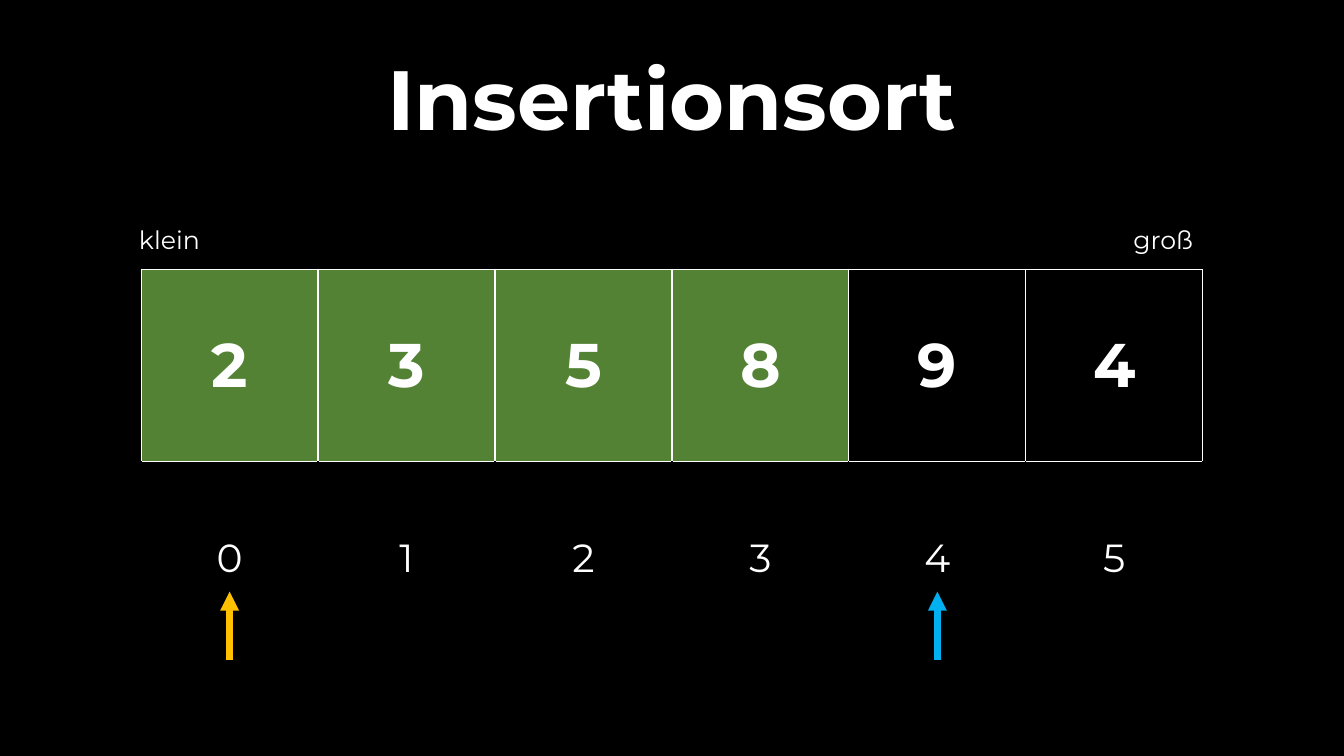
from lxml import etree
from pptx import Presentation
from pptx.dml.color import RGBColor
from pptx.enum.shapes import MSO_CONNECTOR
from pptx.enum.text import MSO_ANCHOR, PP_ALIGN
from pptx.oxml.ns import qn
from pptx.util import Inches, Pt

STRAIGHT = MSO_CONNECTOR.STRAIGHT
MIDDLE = MSO_ANCHOR.MIDDLE
LEFT, CENTER, RIGHT = PP_ALIGN.LEFT, PP_ALIGN.CENTER, PP_ALIGN.RIGHT

FONT = "Montserrat"
BLACK, WHITE, GREEN = "000000", "FFFFFF", "548235"
YELLOW, BLUE = "FFC000", "00B0F0"

SLIDE_WIDTH, SLIDE_HEIGHT = 13.33, 7.5
VALUES = [2, 3, 5, 8, 9, 4]
SORTED_COUNT = 4
TABLE_LEFT, TABLE_TOP = 1.4, 2.67
COLUMN_WIDTH = (SLIDE_WIDTH - 2 * TABLE_LEFT) / len(VALUES)
ROW_HEIGHT = 1.91
LABEL_TOP, LABEL_WIDTH, LABEL_HEIGHT = 2.18, 1.51, 0.4
ARROW_TOP, ARROW_LENGTH = 5.87, 0.68


def color(hex_string):
    """Turn a hex string into a colour."""
    return RGBColor.from_string(hex_string)


def write(text_frame, text, size, alignment, bold=False):
    """Write one white paragraph and return it."""
    text_frame.text = str(text)
    paragraph = text_frame.paragraphs[0]
    paragraph.alignment = alignment
    paragraph.font.name = FONT
    paragraph.font.size = Pt(size)
    paragraph.font.bold = bold
    paragraph.font.color.rgb = color(WHITE)
    return paragraph


def set_title(slide, text):
    """Place the heading across the top of the slide."""
    title = slide.shapes.title
    title.left, title.top = Inches(0.15), Inches(0.31)
    title.width, title.height = Inches(SLIDE_WIDTH - 0.3), Inches(1.42)
    title.text_frame.vertical_anchor = MIDDLE
    paragraph = write(title.text_frame, text, 60, CENTER, bold=True)
    paragraph.line_spacing = 0.9


def add_label(slide, text, left, alignment):
    """Add a small label above the array."""
    label = slide.shapes.add_textbox(
        Inches(left), Inches(LABEL_TOP), Inches(LABEL_WIDTH), Inches(LABEL_HEIGHT))
    label.text_frame.word_wrap = True
    write(label.text_frame, text, 18, alignment)


def set_borders(cell, border_colors):
    """Draw the left, right, top and bottom borders of a cell."""
    properties = cell._tc.get_or_add_tcPr()
    for side, border_color in zip("LRTB", border_colors):
        line = etree.SubElement(properties, qn(f"a:ln{side}"), w=str(Pt(1)))
        fill = etree.SubElement(line, qn("a:solidFill"))
        etree.SubElement(fill, qn("a:srgbClr"), val=border_color)


def format_cell(cell, text, size, bold, fill_color, border_colors):
    """Fill one array cell with centred text."""
    cell.vertical_anchor = MIDDLE
    write(cell.text_frame, text, size, CENTER, bold)
    set_borders(cell, border_colors)
    if fill_color:
        cell.fill.solid()
        cell.fill.fore_color.rgb = color(fill_color)
    else:
        cell.fill.background()


def add_array(slide):
    """Add the array values with their indices below."""
    table = slide.shapes.add_table(
        2, len(VALUES), Inches(TABLE_LEFT), Inches(TABLE_TOP),
        Inches(COLUMN_WIDTH * len(VALUES)), Inches(2 * ROW_HEIGHT)).table
    table.first_row = table.horz_banding = False
    for row in table.rows:
        row.height = Inches(ROW_HEIGHT)
    for index, value in enumerate(VALUES):
        fill_color = GREEN if index < SORTED_COUNT else None
        format_cell(table.cell(0, index), value, 44, True, fill_color, [WHITE] * 4)
        format_cell(table.cell(1, index), index, 28, False, None,
                    [BLACK, BLACK, WHITE, BLACK])


def add_pointer(slide, index, line_color):
    """Add an upward arrow below an index."""
    center = Inches(TABLE_LEFT + (index + 0.5) * COLUMN_WIDTH)
    arrow = slide.shapes.add_connector(
        STRAIGHT, center, Inches(ARROW_TOP + ARROW_LENGTH), center, Inches(ARROW_TOP))
    arrow.line.width = Pt(4.5)
    arrow.line.color.rgb = color(line_color)
    etree.SubElement(arrow.line._get_or_add_ln(), qn("a:tailEnd"), type="triangle")
    etree.SubElement(arrow._element.spPr, qn("a:effectLst"))


def main():
    """Build the slide and save it."""
    presentation = Presentation()
    presentation.slide_width = Inches(SLIDE_WIDTH)
    presentation.slide_height = Inches(SLIDE_HEIGHT)
    slide = presentation.slides.add_slide(presentation.slide_layouts[5])
    slide.background.fill.solid()
    slide.background.fill.fore_color.rgb = color(BLACK)

    set_title(slide, "Insertionsort")
    add_array(slide)
    add_label(slide, "klein", 1.28, LEFT)
    add_label(slide, "groß", SLIDE_WIDTH - TABLE_LEFT - LABEL_WIDTH, RIGHT)
    add_pointer(slide, 0, YELLOW)
    add_pointer(slide, 4, BLUE)
    presentation.save("out.pptx")


if __name__ == "__main__":
    main()
